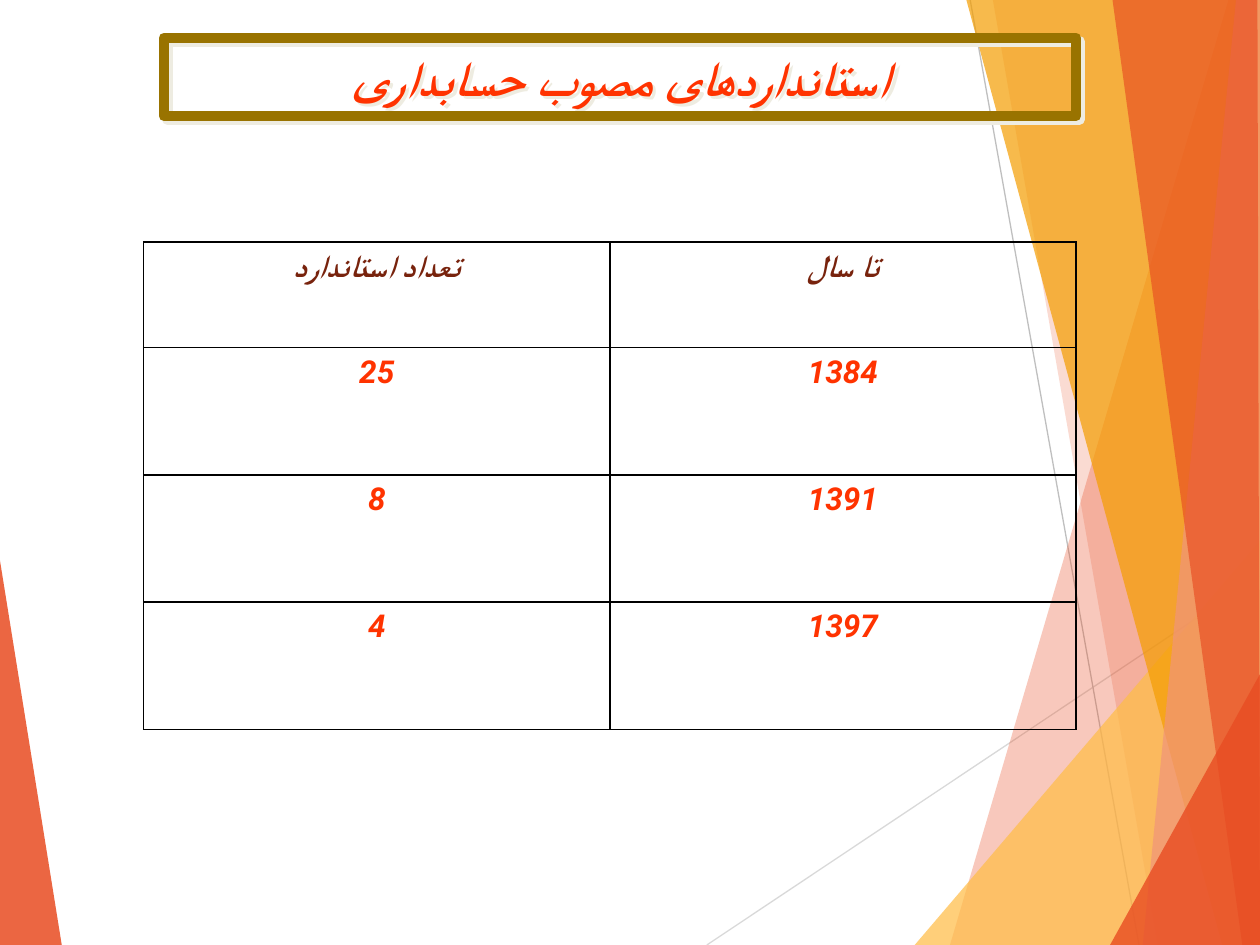
from lxml.etree import SubElement
from pptx import Presentation
from pptx.dml.color import RGBColor
from pptx.enum.shapes import MSO_CONNECTOR
from pptx.enum.text import MSO_ANCHOR, PP_ALIGN
from pptx.oxml.ns import qn
from pptx.util import Inches, Pt

COLORS = {
    "orange": "E84C22", "salmon": "F1947A", "gold": "F49D00", "yellow": "FFBD47",
    "gray": "BFBFBF", "light_gray": "D9D9D9", "frame": "997300", "shadow": "EEECE1",
    "header": "78230D", "red": "FF3300", "border": "000000",
}
FONT = "Roboto"
ROWS = [("تعداد استاندارد", "تا سال"), ("25", "1384"), ("8", "1391"), ("4", "1397")]
LINES = [
    ((5.61, 7.5), (10, 4.57), "light_gray"),
    ((7.7, 0), (9.04, 7.5), "gray"),
]
FACETS = [
    ([(0, 4.45), (0.49, 7.5), (0, 7.5)], "orange", 85),
    ([(9.75, 0), (7.54, 7.5), (10, 7.5), (10, 0)], "orange", 30),
    ([(7.88, 0), (9.19, 7.5), (10, 7.5), (10, 0)], "orange", 20),
    ([(7.26, 7.5), (10, 4.29), (10, 7.5)], "yellow", 72),
    ([(7.67, 0), (9.7, 7.5), (10, 7.5), (10, 0)], "gold", 70),
    ([(9.81, 0), (9.07, 7.5), (10, 7.5), (10, 0)], "salmon", 70),
    ([(8.83, 0), (9.86, 7.5), (10, 7.5), (9.98, 0)], "orange", 65),
    ([(8.81, 7.5), (10, 5.35), (10, 7.5)], "orange", 80),
]


def rgb(name):
    """Return the named colour."""
    return RGBColor.from_string(COLORS[name])


def write(tf, text, size, color):
    """Put one centred bold italic paragraph in a text frame."""
    tf.text = text
    p = tf.paragraphs[0]
    p.alignment = PP_ALIGN.CENTER
    f = p.font
    f.size, f.bold, f.italic, f.name = Pt(size), True, True, FONT
    f.color.rgb = rgb(color)
    SubElement(f._element, qn("a:cs"), typeface=FONT)
    if not text.isdigit():
        p._p.get_or_add_pPr().set("rtl", "1")


def add_facet(s, left, top, points, color, alpha):
    """Draw one translucent polygon."""
    pts = [(left + Inches(x), top + Inches(y)) for x, y in points]
    builder = s.shapes.build_freeform(*pts[0])
    builder.add_line_segments(pts[1:], close=True)
    sp = builder.convert_to_shape()
    sp.shadow.inherit = False
    sp.fill.solid()
    sp.fill.fore_color.rgb = rgb(color)
    clr = sp.fill._xPr.find(qn("a:solidFill"))[0]
    SubElement(clr, qn("a:alpha"), val=str(alpha * 1000))
    sp.line.fill.background()


def add_backdrop(s, left, top):
    """Draw the left facet, the two thin lines and the right facets."""
    add_facet(s, left, top, *FACETS[0])
    for (x1, y1), (x2, y2), color in LINES:
        line = s.shapes.add_connector(
            MSO_CONNECTOR.STRAIGHT, left + Inches(x1), top + Inches(y1),
            left + Inches(x2), top + Inches(y2))
        line.line.color.rgb = rgb(color)
        line.line.width = Pt(0.75)
        SubElement(line._element.spPr, qn("a:effectLst"))
    for facet in FACETS[1:]:
        add_facet(s, left, top, *facet)


def set_borders(cell):
    """Give a cell thin borders on all four sides, ahead of its fill."""
    tcPr = cell._tc.get_or_add_tcPr()
    for i, side in enumerate(("lnL", "lnR", "lnT", "lnB")):
        ln = SubElement(tcPr, qn(f"a:{side}"), w=str(Pt(1)))
        fill = SubElement(ln, qn("a:solidFill"))
        SubElement(fill, qn("a:srgbClr"), val=COLORS["border"])
        tcPr.insert(i, ln)


def add_standards_table(s, left, top, width, header_h, row_h):
    """Add the table of standards counted by year."""
    height = header_h + row_h * (len(ROWS) - 1)
    table = s.shapes.add_table(len(ROWS), 2, left, top, width, height).table
    table.horz_banding = False
    for col in table.columns:
        col.width = width // 2
    for i, values in enumerate(ROWS):
        table.rows[i].height = row_h if i else header_h
        for j, text in enumerate(values):
            cell = table.cell(i, j)
            write(cell.text_frame, text, 18, "red" if i else "header")
            cell.fill.background()
            set_borders(cell)


def place_title(s, left, top, width, height):
    """Frame the title with a thick line and a hard shadow."""
    sp = s.shapes.title
    sp.left, sp.top, sp.width, sp.height = left, top, width, height
    sp.line.color.rgb = rgb("frame")
    sp.line.width = Pt(6)
    effects = SubElement(sp._element.spPr, qn("a:effectLst"))
    shadow = SubElement(effects, qn("a:outerShdw"), dist=str(Pt(2.8)),
                        dir="2700000", algn="ctr", rotWithShape="0")
    SubElement(shadow, qn("a:srgbClr"), val=COLORS["shadow"])
    write(sp.text_frame, "استانداردهای مصوب حسابداری", 28, "red")
    sp.text_frame.vertical_anchor = MSO_ANCHOR.MIDDLE
    s.shapes._spTree.append(sp._element)


def main():
    """Build and save the slide."""
    prs = Presentation()
    prs.slide_width, prs.slide_height = Inches(10), Inches(7.5)
    s = prs.slides.add_slide(prs.slide_layouts[5])
    add_backdrop(s, 0, 0)
    add_standards_table(s, Inches(1.14), Inches(1.92), Inches(7.4),
                        Inches(0.84), Inches(1.01))
    place_title(s, Inches(1.3), Inches(0.3), Inches(7.24), Inches(0.62))
    prs.save("out.pptx")


if __name__ == "__main__":
    main()
